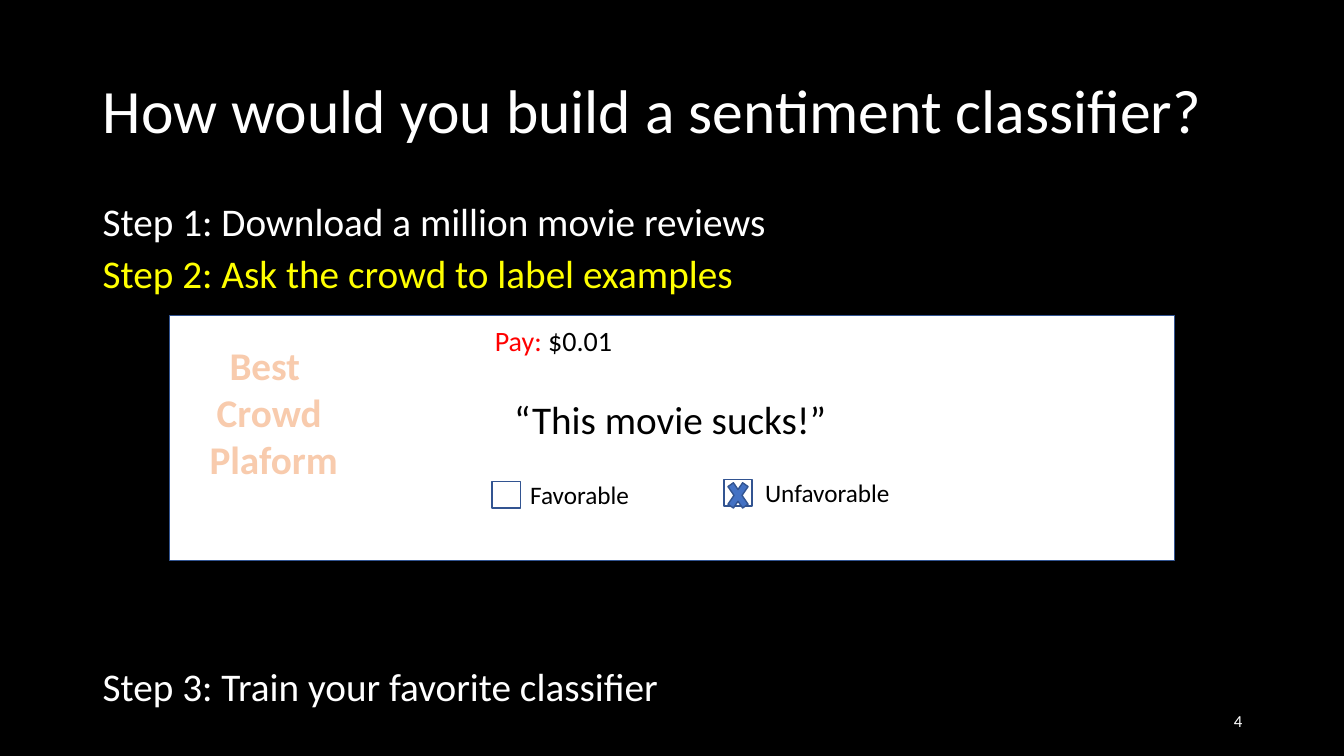
from lxml.etree import SubElement
from pptx import Presentation
from pptx.dml.color import RGBColor
from pptx.enum.shapes import MSO_SHAPE as Shape
from pptx.enum.text import MSO_ANCHOR as Anchor, MSO_AUTO_SIZE as AutoSize, PP_ALIGN as Align
from pptx.oxml.ns import qn
from pptx.util import Inches, Pt

COLORS = {
    "black": "000000",
    "white": "FFFFFF",
    "yellow": "FFFF00",
    "red": "FF0000",
    "blue": "4472C4",
    "border": "325491",
    "peach": "F8CBAD",
    "orange": "ED7D31",
}


def rgb(name):
    return RGBColor.from_string(COLORS[name])


def write(paragraph, text, size=28, color="black", bold=False, align=Align.LEFT,
          line_spacing=None, space_before=None, outline=None):
    paragraph.alignment = align
    if line_spacing:
        paragraph.line_spacing = line_spacing
    if space_before is not None:
        paragraph.space_before = Pt(space_before)
    run = paragraph.add_run()
    run.text = text
    run.font.name = "Calibri"
    run.font.size = Pt(size)
    run.font.bold = bold
    run.font.color.rgb = rgb(color)
    if outline:
        properties = run._r.get_or_add_rPr()
        line = SubElement(properties, qn("a:ln"), w=str(Pt(1.75)))
        fill = SubElement(line, qn("a:solidFill"))
        SubElement(fill, qn("a:srgbClr"), val=COLORS[outline])
        properties.insert(0, line)


def add_frame(slide, left, top, width, height, wrap=True, anchor=Anchor.TOP):
    box = slide.shapes.add_textbox(Inches(left), Inches(top), Inches(width), Inches(height))
    frame = box.text_frame
    frame.word_wrap = wrap
    frame.auto_size = AutoSize.NONE if wrap else AutoSize.SHAPE_TO_FIT_TEXT
    frame.vertical_anchor = anchor
    return frame


def add_block(slide, kind, left, top, width, height, fill="white"):
    block = slide.shapes.add_shape(kind, Inches(left), Inches(top), Inches(width), Inches(height))
    block.shadow.inherit = False
    block.fill.solid()
    block.fill.fore_color.rgb = rgb(fill)
    block.line.color.rgb = rgb("border")
    block.line.width = Pt(1)


def add_title(slide, left, top, width, height):
    title = slide.shapes.title
    title.left, title.top = Inches(left), Inches(top)
    title.width, title.height = Inches(width), Inches(height)
    title.text_frame.vertical_anchor = Anchor.MIDDLE
    write(title.text_frame.paragraphs[0], "How would you build a sentiment classifier?",
          size=44, color="white", line_spacing=0.9)


def add_steps(slide, left, top, width, height):
    steps = [
        ("Step 1: Download a million movie reviews", "white", 10),
        ("Step 2: Ask the crowd to label examples", "yellow", 10),
        ("Step 3: Train your favorite classifier", "white", 268),
    ]
    frame = add_frame(slide, left, top, width, height)
    for index, (step, color, gap) in enumerate(steps):
        paragraph = frame.add_paragraph() if index else frame.paragraphs[0]
        write(paragraph, step, color=color, line_spacing=0.8, space_before=gap)


def add_choice(slide, left, top, label, label_offset, label_width, checked=False):
    add_block(slide, Shape.RECTANGLE, left, top, 0.28, 0.26)
    caption = add_frame(slide, left + label_offset, top - 0.07, label_width, 0.4, wrap=checked)
    write(caption.paragraphs[0], label, size=18)
    if checked:
        add_block(slide, Shape.MATH_MULTIPLY, left, top - 0.05, 0.28, 0.41, fill="blue")


def add_task_card(slide, left, top, width, height):
    add_block(slide, Shape.RECTANGLE, left, top, width, height)
    review = add_frame(slide, left + 3.32, top + 0.74, 3.33, 0.57, wrap=False)
    write(review.paragraphs[0], "“This movie sucks!”")

    platform = add_frame(slide, left + 0.2, top + 0.21, 1.58, 1.51, wrap=False)
    for index, word in enumerate(["Best ", "Crowd", " Plaform"]):
        paragraph = platform.add_paragraph() if index else platform.paragraphs[0]
        write(paragraph, word, color="peach", bold=True, align=Align.CENTER, outline="orange")

    add_choice(slide, left + 3.2, top + 1.65, "Favorable", 0.28, 1.19)
    add_choice(slide, left + 5.5, top + 1.63, "Unfavorable", 0.31, 2.07, checked=True)

    pay = add_frame(slide, left + 3.13, top + 0.03, 1.37, 0.44, wrap=False)
    write(pay.paragraphs[0], "Pay:", size=20, color="red")
    write(pay.paragraphs[0], " $0.01", size=20)


def add_page_number(slide, left, top, width, height):
    frame = add_frame(slide, left, top, width, height, anchor=Anchor.MIDDLE)
    write(frame.paragraphs[0], "4", size=12, color="white", align=Align.RIGHT)


def main():
    deck = Presentation()
    deck.slide_width, deck.slide_height = Inches(13.33), Inches(7.5)
    slide = deck.slides.add_slide(deck.slide_layouts[5])
    slide.background.fill.solid()
    slide.background.fill.fore_color.rgb = rgb("black")
    add_title(slide, 0.92, 0.4, 11.5, 1.45)
    add_steps(slide, 0.92, 2, 11.5, 5.23)
    add_page_number(slide, 9.42, 6.95, 3, 0.4)
    add_task_card(slide, 1.68, 3.13, 9.97, 2.43)
    deck.save("out.pptx")


if __name__ == "__main__":
    main()
